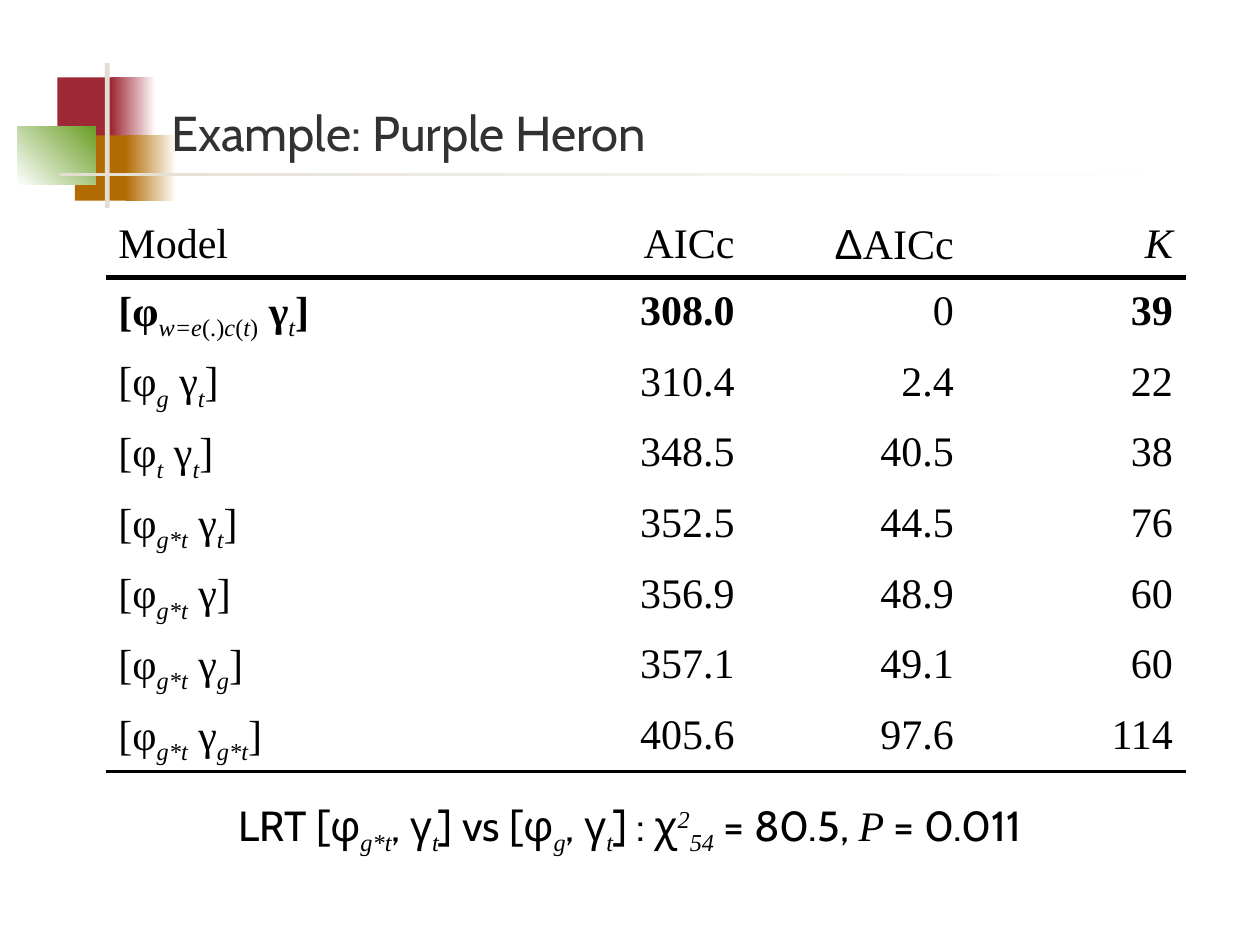
import pptx
import pptx.dml.color
import pptx.enum.shapes
import pptx.enum.text
import pptx.oxml
import pptx.oxml.ns
import pptx.util

SERIF, SANS, SYMBOL = "Times New Roman", "Cabin", "Arial"
BLACK, WHITE, STONE = "000000", "FFFFFF", "E3DED1"
PLAIN_TABLE = "{2D5ABB26-0587-4C30-8999-92F81FD0307C}"
RIGHT = pptx.enum.text.PP_ALIGN.RIGHT
CENTER = pptx.enum.text.PP_ALIGN.CENTER


def colour(code):
    return pptx.dml.color.RGBColor.from_string(code)


def inches(*lengths):
    return [pptx.util.Inches(length) for length in lengths]


def within(box, shares):
    left, top, width, height = box
    x, y, w, h = shares
    return left + x * width, top + y * height, w * width, h * height


def add_run(paragraph, text, style="", font=SERIF, size=24, code=BLACK):
    run = paragraph.add_run()
    run.text = text
    run.font.name = font
    run.font.size = pptx.util.Pt(size)
    run.font.color.rgb = colour(code)
    run.font.bold = "b" in style
    run.font.italic = "i" in style
    for mark, baseline in (("_", "-25000"), ("^", "30000")):
        if mark in style:
            run.font._element.set("baseline", baseline)


def add_block(slide, box, fill, fade_to=None, angle=0):
    block = slide.shapes.add_shape(
        pptx.enum.shapes.MSO_SHAPE.RECTANGLE, *inches(*box))
    block.shadow.inherit = False
    block.line.fill.background()
    if fade_to is None:
        block.fill.solid()
        block.fill.fore_color.rgb = colour(fill)
        return
    block.fill.gradient()
    block.fill.gradient_angle = angle
    for stop, code in zip(block.fill.gradient_stops, (fill, fade_to)):
        stop.color.rgb = colour(code)


def add_emblem(slide, box):
    tiles = [
        ((0.25, 0.10, 0.38, 0.45), "9F2936"),
        ((0.59, 0.10, 0.28, 0.45), "9F2936", WHITE),
        ((0.36, 0.50, 0.37, 0.45), "B26B02"),
        ((0.68, 0.50, 0.32, 0.45), "B26B02", WHITE),
        ((0, 0.44, 0.49, 0.40), WHITE, "6B9F25", 45),
        ((0.55, 0, 0.03, 1), STONE),
    ]
    for shares, *paint in tiles:
        add_block(slide, within(box, shares), *paint)


def add_text(slide, box, anchor):
    frame = slide.shapes.add_textbox(*inches(*box)).text_frame
    frame.word_wrap = True
    frame.vertical_anchor = anchor
    return frame.paragraphs[0]


def add_title(slide, box):
    title = add_text(slide, box, pptx.enum.text.MSO_ANCHOR.BOTTOM)
    add_run(title, "Example: Purple Heron", font=SANS, size=28, code="323232")


def rule_below(cell, points):
    width = int(pptx.util.Pt(points))
    border = pptx.oxml.parse_xml(
        f'<a:lnB {pptx.oxml.ns.nsdecls("a")} w="{width}"><a:solidFill>'
        f'<a:srgbClr val="{BLACK}"/></a:solidFill></a:lnB>')
    cell._tc.get_or_add_tcPr().insert(0, border)


def model(phi, gamma):
    survival = [("[φ",), (phi, "i_")]
    if not gamma:
        return survival + [(" γ]",)]
    return survival + [(" γ",), (gamma, "i_"), ("]",)]


def add_model_table(slide, box):
    header = [[("Model",)], [("AICc",)],
              [("Δ", "", SYMBOL), ("AICc",)], [("K", "i")]]
    best = [("[φ", "b"), ("w=e", "i_"), ("(.)", "_"), ("c", "i_"),
            ("(", "_"), ("t", "i_"), (")", "_"), (" γ", "b"),
            ("t", "i_"), ("]", "b")]
    rows = [header, [best, [("308.0", "b")], [("0",)], [("39", "b")]]]
    for phi, gamma, *values in [
        ("g", "t", "310.4", "2.4", "22"),
        ("t", "t", "348.5", "40.5", "38"),
        ("g*t", "t", "352.5", "44.5", "76"),
        ("g*t", "", "356.9", "48.9", "60"),
        ("g*t", "g", "357.1", "49.1", "60"),
        ("g*t", "g*t", "405.6", "97.6", "114"),
    ]:
        rows.append([model(phi, gamma)] + [[(value,)] for value in values])

    table = slide.shapes.add_table(len(rows), len(header), *inches(*box)).table
    table.first_row = table.horz_banding = False
    table._tbl.tblPr.find(pptx.oxml.ns.qn("a:tableStyleId")).text = PLAIN_TABLE
    for column, width in zip(table.columns, inches(3.47, 1.62, 1.74, 1.74)):
        column.width = width
    rules = {0: 3, len(rows) - 1: 2.25}
    for r, row in enumerate(rows):
        for c, runs in enumerate(row):
            cell = table.cell(r, c)
            cell.fill.background()
            cell.margin_bottom = pptx.util.Inches(0.01)
            paragraph = cell.text_frame.paragraphs[0]
            paragraph.line_spacing = 1.1
            if c:
                paragraph.alignment = RIGHT
            for run in runs:
                add_run(paragraph, *run)
            if r in rules:
                rule_below(cell, rules[r])


def add_test_result(slide, box):
    result = add_text(slide, box, pptx.enum.text.MSO_ANCHOR.TOP)
    result.alignment = CENTER
    result.line_spacing = 1.1
    for text, style in [
        ("LRT [φ", ""), ("g*t", "i_"), (", γ", ""), ("t", "i_"),
        ("] vs [φ", ""), ("g", "i_"), (", γ", ""), ("t", "i_"),
        ("] : χ", ""), ("2", "i^"), ("54", "i_"),
        (" = 80.5, ", ""), ("P", "i"), (" = 0.011", ""),
    ]:
        add_run(result, text, style, SERIF if style else SANS)


def main():
    deck = pptx.Presentation()
    deck.slide_width, deck.slide_height = inches(10, 7.5)
    slide = deck.slides.add_slide(deck.slide_layouts[6])
    add_emblem(slide, (0.14, 0.5, 1.26, 1.15))
    add_block(slide, (0.48, 1.37, 9, 0.03), STONE, WHITE)
    add_title(slide, (1.26, 0.23, 8.52, 1.1))
    add_model_table(slide, (0.84, 1.67, 8.57, 4.24))
    add_test_result(slide, (0, 6.25, 10, 0.71))
    deck.save("out.pptx")


if __name__ == "__main__":
    main()
